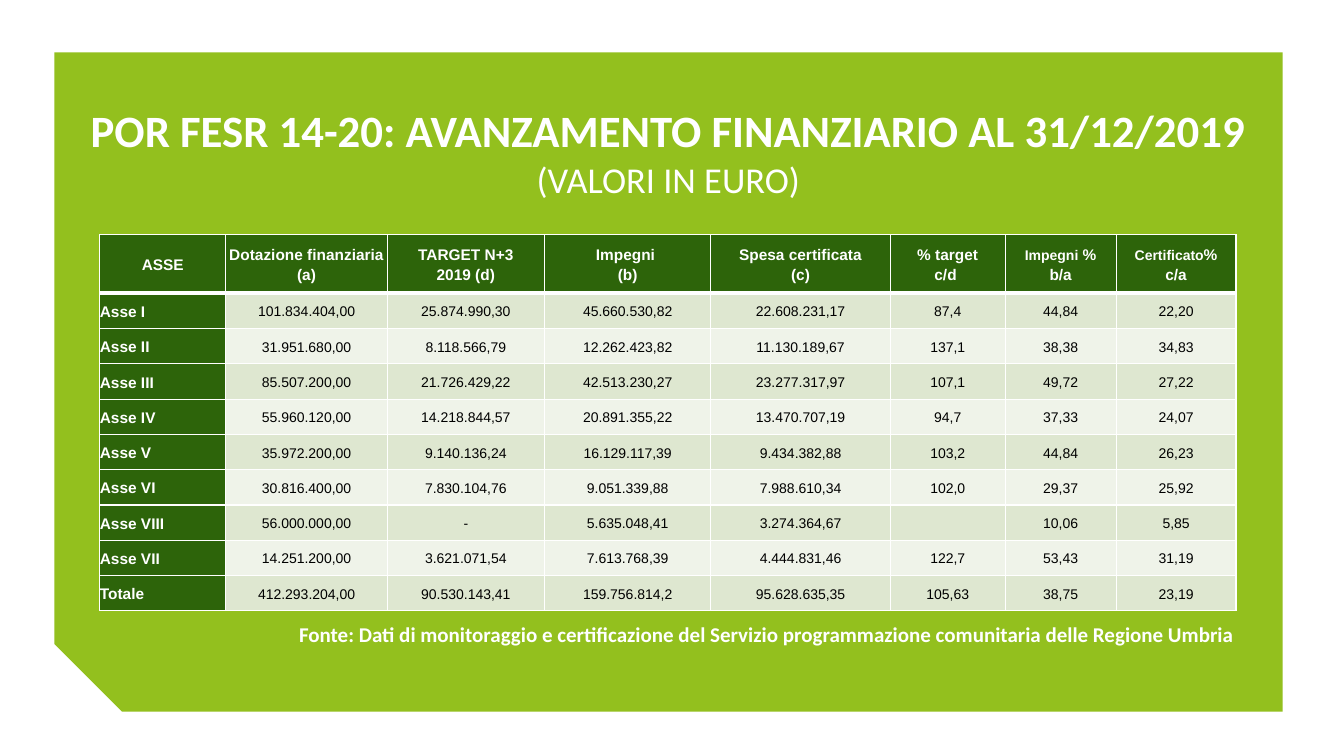
"""Build the slide on the financial progress of POR FESR 14-20."""
from dataclasses import dataclass

import lxml.etree
import pptx
import pptx.dml.color
import pptx.enum.text
import pptx.oxml.ns
import pptx.util

PX = 9144
WHITE = pptx.dml.color.RGBColor(0xFF, 0xFF, 0xFF)
BLACK = pptx.dml.color.RGBColor(0x00, 0x00, 0x00)
LIME = pptx.dml.color.RGBColor(0x93, 0xC0, 0x1E)
DARK_GREEN = pptx.dml.color.RGBColor(0x2D, 0x64, 0x0A)
BANDS = (
    pptx.dml.color.RGBColor(0xEF, 0xF3, 0xE9),
    pptx.dml.color.RGBColor(0xDE, 0xE7, 0xD0),
)
ALIGN = pptx.enum.text.PP_ALIGN
ANCHOR = pptx.enum.text.MSO_ANCHOR
AUTO_SIZE = pptx.enum.text.MSO_AUTO_SIZE

PANEL = ((1272, 706), (121, 706), (54, 639), (54, 52), (1272, 52))
HEADER_HEIGHT, ROW_HEIGHT = 58, 35
SMALL_WORDS = ("Impegni %", "Certificato%")


@dataclass(frozen=True)
class Column:
    """A table column with its heading and width."""
    heading: str
    width: int


@dataclass(frozen=True)
class Axis:
    """A table row: the axis name and its figures."""
    name: str
    figures: tuple[str, ...]


@dataclass(frozen=True)
class CellStyle:
    """The look of a table cell."""
    fill: pptx.dml.color.RGBColor
    color: pptx.dml.color.RGBColor
    size: int
    bold: bool
    align: ALIGN


COLUMNS = (
    Column("ASSE", 125),
    Column("Dotazione finanziaria\n(a)", 160),
    Column("TARGET N+3\n2019 (d)", 156),
    Column("Impegni \n(b)", 165),
    Column("Spesa certificata\n(c)", 178),
    Column("% target\nc/d ", 114),
    Column("Impegni %\nb/a", 110),
    Column("Certificato%\nc/a", 119),
)
AXES = (
    Axis("Asse I", ("101.834.404,00", "25.874.990,30", "45.660.530,82", "22.608.231,17", "87,4", "44,84", "22,20")),
    Axis("Asse II", ("31.951.680,00", "8.118.566,79", "12.262.423,82", "11.130.189,67", "137,1", "38,38", "34,83")),
    Axis("Asse III", ("85.507.200,00", "21.726.429,22", "42.513.230,27", "23.277.317,97", "107,1", "49,72", "27,22")),
    Axis("Asse IV", ("55.960.120,00", "14.218.844,57", "20.891.355,22", "13.470.707,19", "94,7", "37,33", "24,07")),
    Axis("Asse V", ("35.972.200,00", "9.140.136,24", "16.129.117,39", "9.434.382,88", "103,2", "44,84", "26,23")),
    Axis("Asse VI", ("30.816.400,00", "7.830.104,76", "9.051.339,88", "7.988.610,34", "102,0", "29,37", "25,92")),
    Axis("Asse VIII", ("56.000.000,00", "-", "5.635.048,41", "3.274.364,67", "", "10,06", "5,85")),
    Axis("Asse VII", ("14.251.200,00", "3.621.071,54", "7.613.768,39", "4.444.831,46", "122,7", "53,43", "31,19")),
    Axis("Totale", ("412.293.204,00", "90.530.143,41", "159.756.814,2", "95.628.635,35", "105,63", "38,75", "23,19")),
)
HEADING = CellStyle(DARK_GREEN, WHITE, 11, True, ALIGN.CENTER)
AXIS_NAME = CellStyle(DARK_GREEN, WHITE, 11, True, ALIGN.LEFT)
FIGURES = tuple(CellStyle(band, BLACK, 10, False, ALIGN.CENTER) for band in BANDS)


def set_font(font: pptx.text.text.Font, name: str, size: int, bold: bool,
             color: pptx.dml.color.RGBColor) -> None:
    """Format a paragraph or span font."""
    font.name = name
    font.size = pptx.util.Pt(size)
    font.bold = bold
    font.color.rgb = color


def set_insets(frame: pptx.text.text.TextFrame, inset: int) -> None:
    """Give a text frame equal insets on all sides."""
    frame.margin_left = frame.margin_right = inset * PX
    frame.margin_top = frame.margin_bottom = inset * PX


def add_borders(cell: pptx.table._Cell, top: int, bottom: int) -> None:
    """Draw white borders around a cell, with widths in points."""
    properties = cell._tc.get_or_add_tcPr()
    for side, width in (("L", 1), ("R", 1), ("T", top), ("B", bottom)):
        line = lxml.etree.SubElement(properties, pptx.oxml.ns.qn(f"a:ln{side}"),
                                     w=str(pptx.util.Pt(width)))
        fill = lxml.etree.SubElement(line, pptx.oxml.ns.qn("a:solidFill"))
        lxml.etree.SubElement(fill, pptx.oxml.ns.qn("a:srgbClr"), val=str(WHITE))


def fill_cell(cell: pptx.table._Cell, text: str, style: CellStyle) -> None:
    """Write one cell, a paragraph per line of text."""
    cell.fill.solid()
    cell.fill.fore_color.rgb = style.fill
    cell.vertical_anchor = ANCHOR.MIDDLE
    cell.margin_left = cell.margin_right = cell.margin_top = cell.margin_bottom = 0
    cell.text = text
    for para in cell.text_frame.paragraphs:
        para.alignment = style.align
        para.line_spacing = 1.15
        set_font(para.font, "Arial", style.size, style.bold, style.color)
        if para.text in SMALL_WORDS:
            span = para.runs[0]
            word = span.text.rstrip(" %")
            para.add_run().text = span.text[len(word):]
            span.text = word
            span.font.size = pptx.util.Pt(10)


def add_panel(page: pptx.slide.Slide) -> None:
    """Draw the green panel with a cut corner behind the title."""
    builder = page.shapes.build_freeform(*PANEL[0], scale=PX)
    builder.add_line_segments(PANEL[1:], close=True)
    panel = builder.convert_to_shape()
    panel.shadow.inherit = False
    panel.fill.solid()
    panel.fill.fore_color.rgb = LIME
    panel.line.fill.background()
    page.shapes.title._element.addprevious(panel._element)


def write_title(page: pptx.slide.Slide) -> None:
    """Place and write the title."""
    title = page.shapes.title
    title.left, title.top, title.width, title.height = (n * PX for n in (63, 99, 1200, 103))
    frame = title.text_frame
    frame.word_wrap = True
    frame.auto_size = AUTO_SIZE.NONE
    frame.vertical_anchor = ANCHOR.MIDDLE
    set_insets(frame, 5)
    para = frame.paragraphs[0]
    para.alignment = ALIGN.CENTER
    for text, size, bold in (
        ("POR FESR 14-20: AVANZAMENTO FINANZIARIO AL 31/12/2019 ", 32, True),
        ("(VALORI IN EURO)", 26, False),
    ):
        span = para.add_run()
        span.text = text
        set_font(span.font, "Calibri", size, bold, WHITE)


def add_axis_table(page: pptx.slide.Slide) -> None:
    """Add the table of figures by axis."""
    width = sum(column.width for column in COLUMNS)
    height = HEADER_HEIGHT + ROW_HEIGHT * len(AXES)
    table = page.shapes.add_table(len(AXES) + 1, len(COLUMNS), 99 * PX, 233 * PX,
                                  width * PX, height * PX).table
    for index, column in enumerate(COLUMNS):
        table.columns[index].width = column.width * PX
    texts = [[column.heading for column in COLUMNS]]
    texts += [[axis.name, *axis.figures] for axis in AXES]
    for row, line in enumerate(texts):
        table.rows[row].height = (ROW_HEIGHT if row else HEADER_HEIGHT) * PX
        for index, text in enumerate(line):
            cell = table.cell(row, index)
            add_borders(cell, 3 if row == 1 else 1, 1 if row else 3)
            style = HEADING if row == 0 else FIGURES[row % 2] if index else AXIS_NAME
            fill_cell(cell, text, style)


def add_credit(page: pptx.slide.Slide) -> None:
    """Add the line that names the data source."""
    box = page.shapes.add_textbox(*(n * PX for n in (87, 612, 1142, 116)))
    frame = box.text_frame
    frame.word_wrap = True
    set_insets(frame, 5)
    para = frame.paragraphs[0]
    para.text = ("Fonte: Dati di monitoraggio e certificazione del Servizio "
                 "programmazione comunitaria delle Regione Umbria")
    para.alignment = ALIGN.RIGHT
    para.space_before = pptx.util.Pt(7)
    set_font(para.font, "Calibri", 15, True, WHITE)


def main() -> None:
    """Build and save the deck."""
    deck = pptx.Presentation()
    deck.slide_width, deck.slide_height = 1333 * PX, 750 * PX
    page = deck.slides.add_slide(deck.slide_layouts[5])
    add_panel(page)
    write_title(page)
    add_axis_table(page)
    add_credit(page)
    deck.save("out.pptx")


if __name__ == "__main__":
    main()
